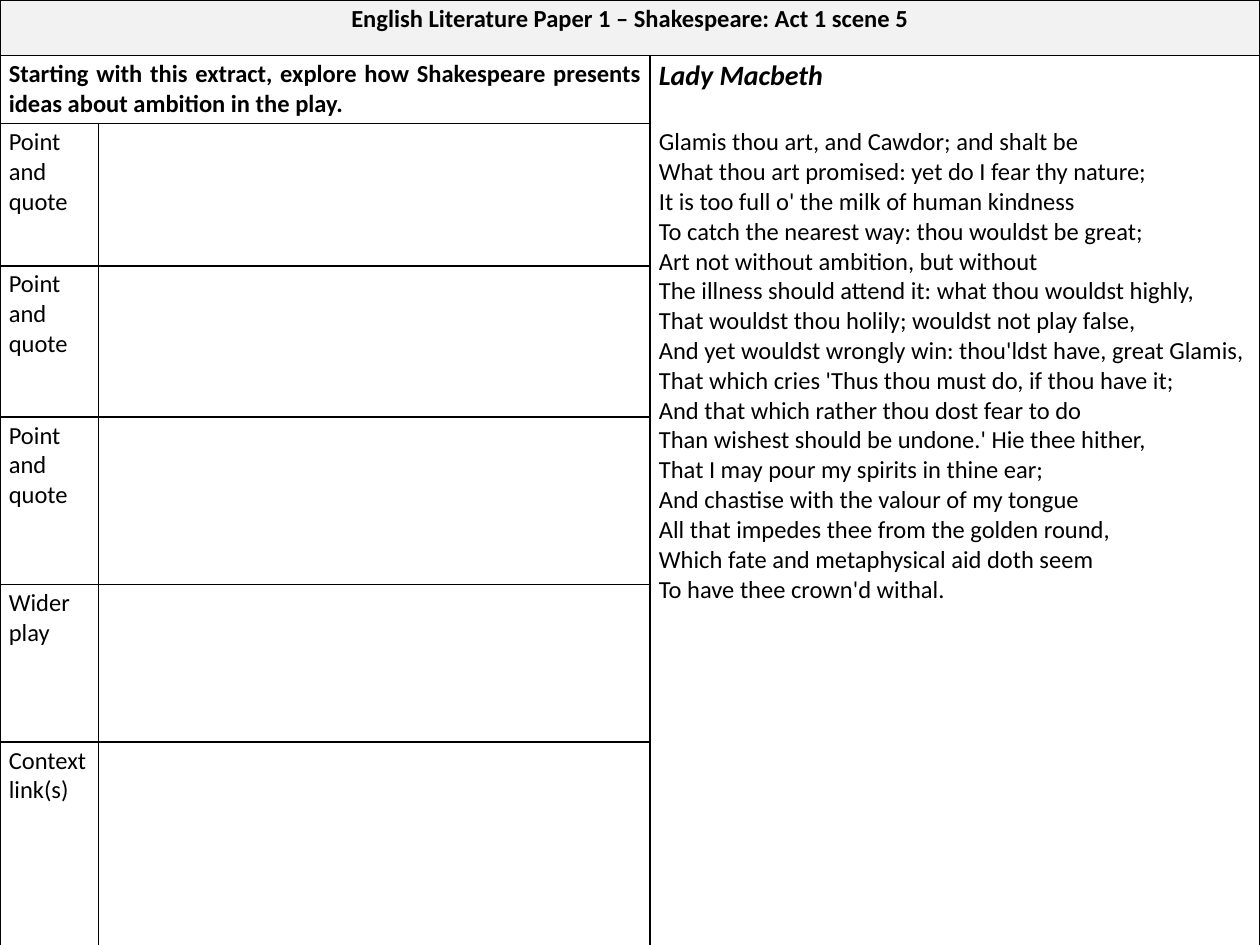
from lxml import etree
from pptx import Presentation
from pptx.dml.color import RGBColor
from pptx.enum import text
from pptx.oxml import ns
from pptx.util import Inches, Pt

BLACK = RGBColor(0x00, 0x00, 0x00)
LIGHT_GREY = RGBColor(0xF2, 0xF2, 0xF2)

COLUMN_WIDTHS = [0.78, 4.38, 4.84]
ROW_HEIGHTS = [0.44, 0.54, 1.13, 1.2, 1.33, 1.25, 1.66]
TITLE = "English Literature Paper 1 – Shakespeare: Act 1 scene 5"
QUESTION = ("Starting with this extract, explore how Shakespeare presents "
            "ideas about ambition in the play.")
PROMPTS = ["Point and quote"] * 3 + ["Wider play", "Context link(s)"]
SPEECH = """Lady Macbeth
Glamis thou art, and Cawdor; and shalt be
What thou art promised: yet do I fear thy nature;
It is too full o' the milk of human kindness
To catch the nearest way: thou wouldst be great;
Art not without ambition, but without
The illness should attend it: what thou wouldst highly,
That wouldst thou holily; wouldst not play false,
And yet wouldst wrongly win: thou'ldst have, great Glamis,
That which cries 'Thus thou must do, if thou have it;
And that which rather thou dost fear to do
Than wishest should be undone.' Hie thee hither,
That I may pour my spirits in thine ear;
And chastise with the valour of my tongue
All that impedes thee from the golden round,
Which fate and metaphysical aid doth seem
To have thee crown'd withal."""


def add_borders(cell):
    properties = cell._tc.get_or_add_tcPr()
    for side in ("lnL", "lnR", "lnT", "lnB"):
        line = etree.SubElement(properties, ns.qn(f"a:{side}"), w=str(Pt(1)))
        fill = etree.SubElement(line, ns.qn("a:solidFill"))
        etree.SubElement(fill, ns.qn("a:srgbClr"), val=str(BLACK))


def write(cell, content, bold=False, align=text.PP_ALIGN.LEFT):
    cell.text_frame.text = content
    for para in cell.text_frame.paragraphs:
        para.alignment = align
        for span in para.runs:
            span.font.name = "Calibri"
            span.font.size = Pt(14)
            span.font.bold = bold
            span.font.color.rgb = BLACK


deck = Presentation()
deck.slide_width, deck.slide_height = Inches(10), Inches(7.5)
page = deck.slides.add_slide(deck.slide_layouts[6])

table = page.shapes.add_table(
    len(ROW_HEIGHTS), len(COLUMN_WIDTHS), 0, 0,
    Inches(sum(COLUMN_WIDTHS)), Inches(sum(ROW_HEIGHTS))).table
table.first_row = False
table.horz_banding = False
for column, width in zip(table.columns, COLUMN_WIDTHS):
    column.width = Inches(width)
for row, height in zip(table.rows, ROW_HEIGHTS):
    row.height = Inches(height)

for cell in table.iter_cells():
    cell.margin_left = cell.margin_right = Inches(0.07)
    cell.margin_top = cell.margin_bottom = Inches(0.03)
    add_borders(cell)
    cell.fill.background()

title_cell = table.cell(0, 0)
title_cell.merge(table.cell(0, 2))
title_cell.fill.solid()
title_cell.fill.fore_color.rgb = LIGHT_GREY
write(title_cell, TITLE, bold=True, align=text.PP_ALIGN.CENTER)

question_cell = table.cell(1, 0)
question_cell.merge(table.cell(1, 1))
write(question_cell, QUESTION, bold=True, align=text.PP_ALIGN.JUSTIFY)

for row_number, prompt in enumerate(PROMPTS, start=2):
    write(table.cell(row_number, 0), prompt)

speech_cell = table.cell(1, 2)
speech_cell.merge(table.cell(6, 2))
write(speech_cell, SPEECH)
speaker = speech_cell.text_frame.paragraphs[0]
speaker.space_after = Pt(19.5)
speaker_font = speaker.runs[0].font
speaker_font.size = Pt(16)
speaker_font.bold = speaker_font.italic = True

deck.save("out.pptx")
